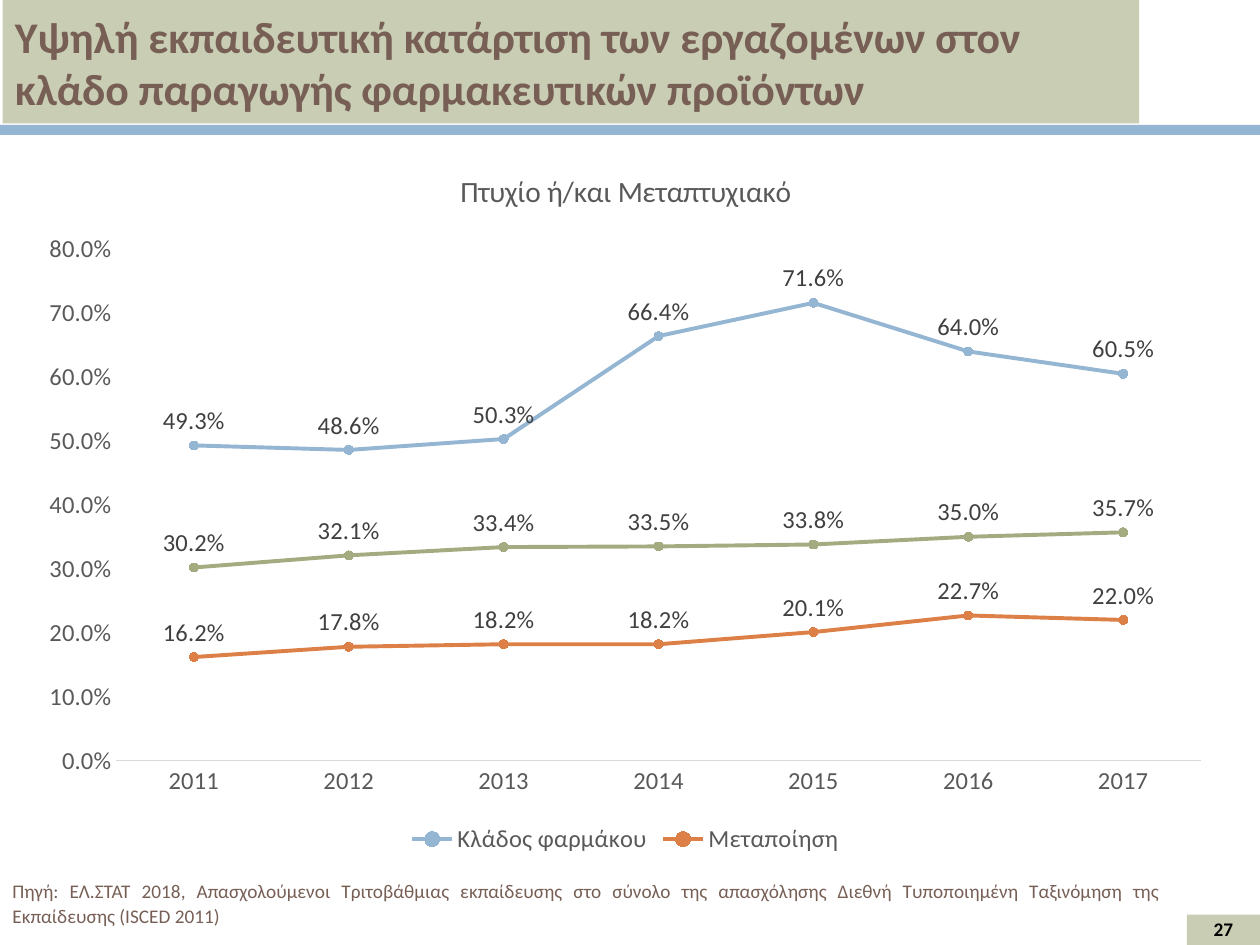
from lxml import etree
from pptx import Presentation
from pptx import util as u
from pptx.chart.data import CategoryChartData
from pptx.dml.color import RGBColor
from pptx.enum import chart as ch, shapes, text
from pptx.oxml import parse_xml
from pptx.oxml.ns import nsdecls, qn


def color(value):
    return RGBColor.from_string(value)


def style(font, size, value, bold=False):
    font.name = "Calibri"
    font.size = u.Pt(size)
    font.bold = bold
    font.color.rgb = color(value)


prs = Presentation()
prs.slide_width, prs.slide_height = u.Inches(10), u.Inches(7.5)
slide = prs.slides.add_slide(prs.slide_layouts[6])

bands = []
for left, top, width, height, fill in [
    (9.42, 7.26, 0.58, 0.24, "C9CDB3"),
    (0, 0.99, 10, 0.08, "94B6D2"),
    (0.02, 0, 9.02, 0.98, "C9CDB3"),
]:
    band = slide.shapes.add_shape(
        shapes.MSO_SHAPE.RECTANGLE,
        u.Inches(left), u.Inches(top), u.Inches(width), u.Inches(height))
    band.shadow.inherit = False
    band.fill.solid()
    band.fill.fore_color.rgb = color(fill)
    band.line.fill.background()
    bands.append(band)

heading = bands[-1].text_frame
heading.word_wrap = True
heading.vertical_anchor = text.MSO_ANCHOR.MIDDLE
heading.text = "Υψηλή εκπαιδευτική κατάρτιση των εργαζομένων στον κλάδο παραγωγής φαρμακευτικών προϊόντων"
heading.paragraphs[0].alignment = text.PP_ALIGN.LEFT
style(heading.paragraphs[0].font, 25, "775F55", True)

source = slide.shapes.add_textbox(
    u.Inches(0), u.Inches(6.92), u.Inches(9.31), u.Inches(0.5)).text_frame
source.word_wrap = True
source.text = (
    "Πηγή: ΕΛ.ΣΤΑΤ 2018, Απασχολούμενοι Τριτοβάθμιας εκπαίδευσης στο σύνολο της "
    "απασχόλησης Διεθνή Τυποποιημένη Ταξινόμηση της Εκπαίδευσης (ISCED 2011)")
citation = source.paragraphs[0]
citation.alignment = text.PP_ALIGN.JUSTIFY
citation.line_spacing = 1.07
citation.space_after = u.Pt(8)
style(citation.font, 11, "775F55")

degrees = CategoryChartData(number_format="0.0%")
degrees.categories = [str(year) for year in range(2011, 2018)]
degrees.add_series("Κλάδος φαρμάκου", [0.493, 0.486, 0.503, 0.664, 0.716, 0.640, 0.605])
degrees.add_series("Μεταποίηση", [0.162, 0.178, 0.182, 0.182, 0.201, 0.227, 0.220])
degrees.add_series("", [0.302, 0.321, 0.334, 0.335, 0.338, 0.350, 0.357])
chart = slide.shapes.add_chart(
    ch.XL_CHART_TYPE.LINE_MARKERS,
    u.Inches(0.2), u.Inches(1.15), u.Inches(9.53), u.Inches(5.67), degrees).chart
style(chart.font, 14, "000000")
chart.has_title = True
chart.chart_title.text_frame.text = "Πτυχίο ή/και Μεταπτυχιακό"
style(chart.chart_title.text_frame.paragraphs[0].font, 16.8, "595959")
chart.chart_title.include_in_layout = False

for axis in (chart.category_axis, chart.value_axis):
    axis.major_tick_mark = axis.minor_tick_mark = ch.XL_TICK_MARK.NONE
    axis.has_major_gridlines = False
    style(axis.tick_labels.font, 14, "595959")
chart.category_axis.format.line.color.rgb = color("D9D9D9")
chart.category_axis.format.line.width = u.Pt(0.75)
chart.value_axis.format.line.fill.background()
chart.value_axis.minimum_scale = 0
chart.value_axis.maximum_scale = 0.8
chart.value_axis.major_unit = 0.1
chart.value_axis.tick_labels.number_format = "0.0%"
chart.value_axis.tick_labels.number_format_is_linked = False

plot = chart.plots[0]
plot.vary_by_categories = False
for series, shade in zip(plot.series, ["94B6D2", "DD8047", "A5AB81"]):
    series.smooth = False
    series.format.line.color.rgb = color(shade)
    series.format.line.width = u.Pt(2.25)
    series.marker.style = ch.XL_MARKER_STYLE.CIRCLE
    series.marker.size = 5
    series.marker.format.fill.solid()
    series.marker.format.fill.fore_color.rgb = color(shade)
    series.marker.format.line.color.rgb = color(shade)
    labels = series.data_labels
    labels.show_value = True
    labels.position = ch.XL_LABEL_POSITION.ABOVE
    labels.number_format = "0.0%"
    labels.number_format_is_linked = False
    style(labels.font, 14, "404040")

chart.has_legend = True
chart.legend.position = ch.XL_LEGEND_POSITION.BOTTOM
chart.legend.include_in_layout = False
style(chart.legend.font, 14, "595959")
legend = chart.element.find(".//" + qn("c:legend"))
legend.find(qn("c:legendPos")).addnext(parse_xml(
    f'<c:legendEntry {nsdecls("c")}><c:idx val="2"/><c:delete val="1"/></c:legendEntry>'))

plot_area = chart.element.find(".//" + qn("c:plotArea"))
for automatic in plot_area.findall(qn("c:layout")):
    plot_area.remove(automatic)
layout = parse_xml(f'<c:layout {nsdecls("c")}><c:manualLayout/></c:layout>')
for tag, value in [("layoutTarget", "inner"), ("xMode", "edge"), ("yMode", "edge"),
                   ("x", "0.076"), ("y", "0.146"), ("w", "0.903"), ("h", "0.716")]:
    etree.SubElement(layout[0], qn("c:" + tag)).set("val", value)
plot_area.insert(0, layout)

page = slide.shapes.add_textbox(
    u.Inches(9.42), u.Inches(7.24), u.Inches(0.58), u.Inches(0.27)).text_frame
page.word_wrap = True
page.vertical_anchor = text.MSO_ANCHOR.MIDDLE
page.text = "27"
page.paragraphs[0].alignment = text.PP_ALIGN.CENTER
style(page.paragraphs[0].font, 11, "000000", True)

prs.save("out.pptx")
